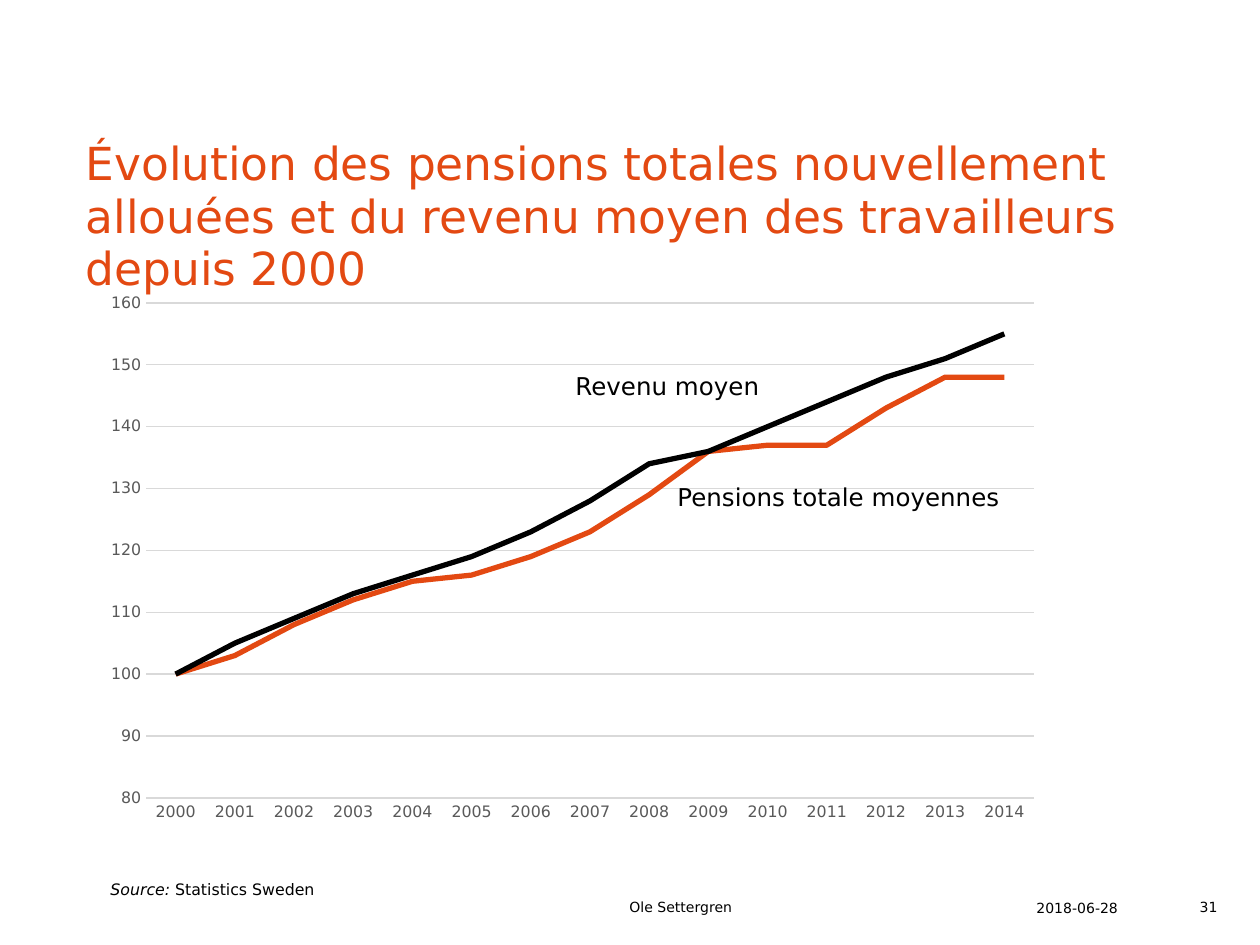
import pptx
import pptx.util
import pptx.chart.data
import pptx.dml.color
import pptx.enum.chart
import pptx.enum.text
import lxml.etree

PX = 914400 / 126
FONT = "DejaVu Sans"
ORANGE = pptx.dml.color.RGBColor(0xE3, 0x49, 0x12)
BLACK = pptx.dml.color.RGBColor(0, 0, 0)
GRAY = pptx.dml.color.RGBColor(0x59, 0x59, 0x59)
GRID = pptx.dml.color.RGBColor(0xD9, 0xD9, 0xD9)
ANCHOR = pptx.enum.text.MSO_ANCHOR
ALIGN = pptx.enum.text.PP_ALIGN

YEARS = [str(year) for year in range(2000, 2015)]
CURVES = [
    ("Pensions totale moyennes", ORANGE,
     [100, 103, 108, 112, 115, 116, 119, 123, 129, 136, 137, 137, 143, 148, 148]),
    ("Revenu moyen", BLACK,
     [100, 105, 109, 113, 116, 119, 123, 128, 134, 136, 140, 144, 148, 151, 155]),
]
CHART_BOX = (92, 284, 961, 549)
PLOT_BOX = (146, 303, 888, 495)


def emu(*lengths):
    return [pptx.util.Emu(round(length * PX)) for length in lengths]


def style(font, size, color):
    font.name = FONT
    font.size = pptx.util.Pt(size)
    font.color.rgb = color


def add_run(paragraph, text, size, color=BLACK, italic=False):
    run = paragraph.add_run()
    run.text = text
    style(run.font, size, color)
    run.font.italic = italic


def add_title(slide, text):
    title = slide.shapes.title
    title.left, title.top, title.width, title.height = emu(73, 186, 1118, 115)
    frame = title.text_frame
    frame.word_wrap = True
    frame.auto_size = pptx.enum.text.MSO_AUTO_SIZE.NONE
    frame.vertical_anchor = ANCHOR.BOTTOM
    paragraph = frame.paragraphs[0]
    paragraph.alignment = ALIGN.LEFT
    paragraph.line_spacing = pptx.util.Pt(30)
    add_run(paragraph, text, 26, ORANGE)


def add_label(slide, box, runs, size, anchor=ANCHOR.TOP, align=ALIGN.LEFT, wrap=True):
    frame = slide.shapes.add_textbox(*emu(*box)).text_frame
    frame.word_wrap = wrap
    frame.vertical_anchor = anchor
    paragraph = frame.paragraphs[0]
    paragraph.alignment = align
    for text, italic in runs:
        add_run(paragraph, text, size, italic=italic)


def style_line(line, color, width):
    line.color.rgb = color
    line.width = pptx.util.Pt(width)


def place_plot(chart):
    left, top, width, height = CHART_BOX
    x, y, w, h = PLOT_BOX
    plot_area = chart.plots[0]._element.getparent()
    namespace = lxml.etree.QName(plot_area).namespace

    def child(parent, tag, value=None):
        node = lxml.etree.SubElement(parent, f"{{{namespace}}}{tag}")
        if value is not None:
            node.set("val", str(value))
        return node

    for layout in plot_area.findall(f"{{{namespace}}}layout"):
        plot_area.remove(layout)
    layout = child(plot_area, "layout")
    plot_area.insert(0, layout)
    manual = child(layout, "manualLayout")
    child(manual, "layoutTarget", "inner")
    child(manual, "xMode", "edge")
    child(manual, "yMode", "edge")
    child(manual, "x", (x - left) / width)
    child(manual, "y", (y - top) / height)
    child(manual, "w", w / width)
    child(manual, "h", h / height)


def add_curves(slide):
    data = pptx.chart.data.CategoryChartData()
    data.categories = YEARS
    for name, _, values in CURVES:
        data.add_series(name, values)
    chart = slide.shapes.add_chart(
        pptx.enum.chart.XL_CHART_TYPE.LINE, *emu(*CHART_BOX), data).chart
    chart.has_legend = False
    chart.has_title = False
    style(chart.font, 10, BLACK)
    chart.plots[0].vary_by_categories = False

    for axis in (chart.category_axis, chart.value_axis):
        axis.major_tick_mark = pptx.enum.chart.XL_TICK_MARK.NONE
        axis.minor_tick_mark = pptx.enum.chart.XL_TICK_MARK.NONE
        style(axis.tick_labels.font, 9, GRAY)
    style_line(chart.category_axis.format.line, GRID, 0.75)
    index = chart.value_axis
    index.minimum_scale, index.maximum_scale, index.major_unit = 80, 160, 10
    index.format.line.fill.background()
    style_line(index.major_gridlines.format.line, GRID, 0.75)

    for curve, (_, color, _) in zip(chart.plots[0].series, CURVES):
        curve.smooth = False
        curve.marker.style = pptx.enum.chart.XL_MARKER_STYLE.NONE
        style_line(curve.format.line, color, 3)
    place_plot(chart)


def main():
    deck = pptx.Presentation()
    deck.slide_width, deck.slide_height = emu(1260, 945)
    slide = deck.slides.add_slide(deck.slide_layouts[5])
    add_title(slide, "Évolution des pensions totales nouvellement allouées "
                     "et du revenu moyen des travailleurs depuis 2000")
    add_curves(slide)
    add_label(slide, (563, 365, 209, 43), [("Revenu moyen", False)], 14, wrap=False)
    add_label(slide, (665, 476, 349, 43), [("Pensions totale moyennes", False)], 14, wrap=False)
    add_label(slide, (98, 874, 486, 32), [("Source: ", True), ("Statistics Sweden", False)], 9)
    add_label(slide, (617, 892, 397, 30), [("Ole Settergren", False)], 8, ANCHOR.MIDDLE)
    add_label(slide, (1024, 892, 123, 30), [("2018-06-28", False)], 8, ANCHOR.BOTTOM)
    add_label(slide, (1158, 892, 72, 29), [("31", False)], 8, ANCHOR.BOTTOM, ALIGN.RIGHT)
    deck.save("out.pptx")


if __name__ == "__main__":
    main()
